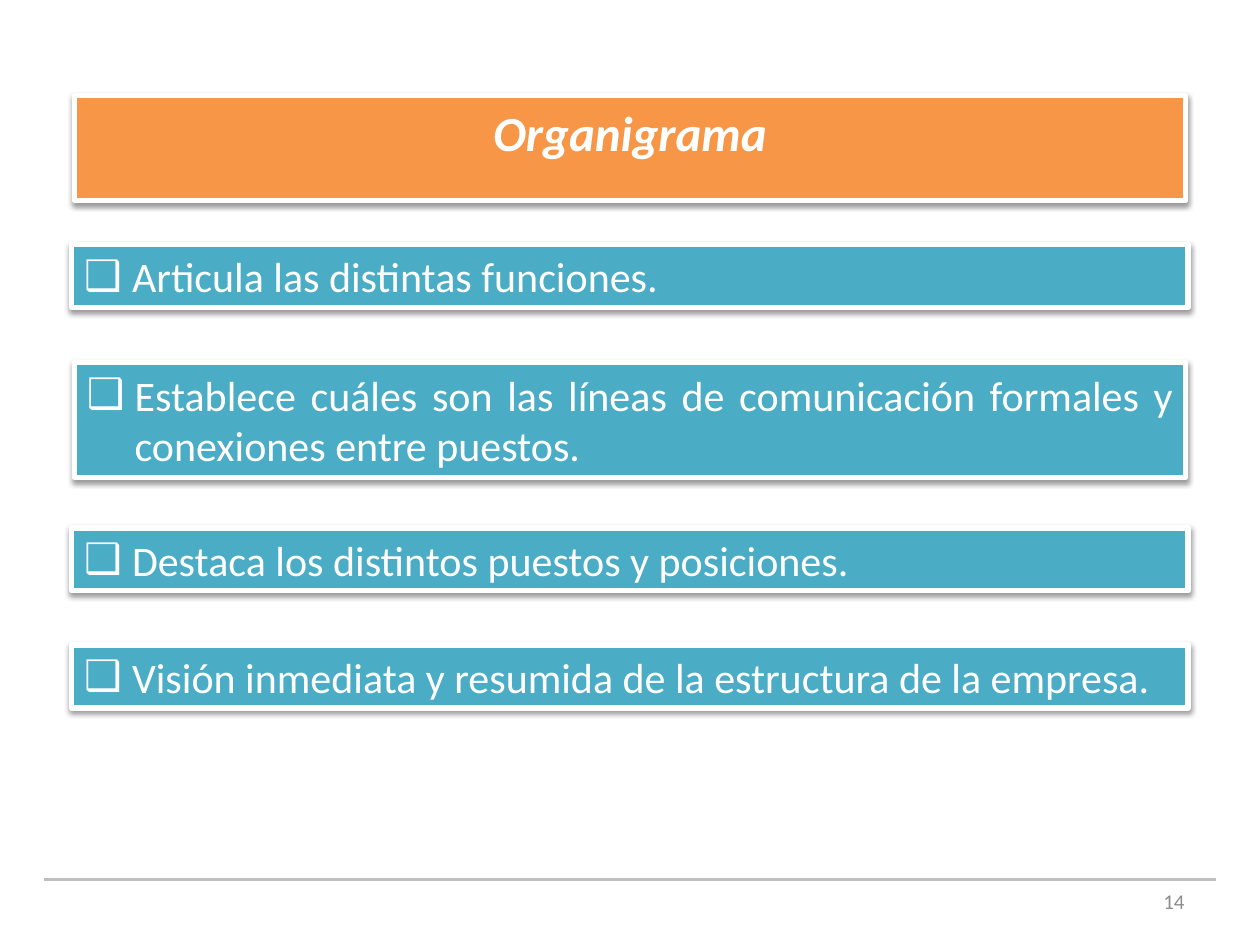
from lxml.etree import SubElement
from pptx import Presentation
from pptx.dml.color import RGBColor
from pptx.enum.shapes import MSO_CONNECTOR, MSO_SHAPE
from pptx.enum.text import MSO_ANCHOR, MSO_AUTO_SIZE, PP_ALIGN
from pptx.oxml.ns import qn
from pptx.util import Inches, Pt

FONT = "Calibri"
WHITE = RGBColor(0xFF, 0xFF, 0xFF)
ORANGE = RGBColor(0xF7, 0x96, 0x46)
TEAL = RGBColor(0x4B, 0xAC, 0xC6)
RULE_GRAY = RGBColor(0xBF, 0xBF, 0xBF)
NUMBER_GRAY = RGBColor(0x8C, 0x8C, 0x8C)

FUNCTIONS = [
    ("Articula las distintas funciones.", (0.57, 1.94, 8.86, 0.5)),
    ("Establece cuáles son las líneas de comunicación formales y conexiones entre puestos.",
     (0.59, 2.88, 8.82, 0.91)),
    ("Destaca los distintos puestos y posiciones.", (0.57, 4.19, 8.86, 0.5)),
    ("Visión inmediata y resumida de la estructura de la empresa.", (0.57, 5.12, 8.86, 0.5)),
]


def write_text(shape, text, size, color, align, anchor):
    """Write one formatted paragraph into a shape and return it."""
    frame = shape.text_frame
    frame.text = text
    frame.word_wrap = True
    frame.vertical_anchor = anchor
    paragraph = frame.paragraphs[0]
    paragraph.alignment = align
    font = paragraph.runs[0].font
    font.name, font.size = FONT, Pt(size)
    font.color.rgb = color
    return paragraph


def style_panel(panel, color):
    """Give a panel its fill, white border and soft shadow below."""
    panel.fill.solid()
    panel.fill.fore_color.rgb = color
    panel.line.color.rgb = WHITE
    panel.line.width = Pt(3)
    panel.shadow.inherit = False
    effects = panel._element.spPr.find(qn("a:effectLst"))
    shadow = SubElement(effects, qn("a:outerShdw"), blurRad=str(Pt(3.1)),
                        dist=str(Pt(1.6)), dir="5400000", rotWithShape="0")
    shade = SubElement(shadow, qn("a:srgbClr"), val="000000")
    SubElement(shade, qn("a:alpha"), val="38000")
    panel.text_frame.auto_size = MSO_AUTO_SIZE.SHAPE_TO_FIT_TEXT


def add_heading(slide, left, top, width, height):
    """Place the title placeholder as an orange banner."""
    heading = slide.shapes.title
    heading.left, heading.top = Inches(left), Inches(top)
    heading.width, heading.height = Inches(width), Inches(height)
    style_panel(heading, ORANGE)
    paragraph = write_text(heading, "Organigrama", 28, WHITE, PP_ALIGN.CENTER, MSO_ANCHOR.TOP)
    paragraph.runs[0].font.bold = True
    paragraph.runs[0].font.italic = True


def add_function(slide, text, left, top, width, height):
    """Add one teal panel with a square-bulleted statement."""
    panel = slide.shapes.add_shape(MSO_SHAPE.RECTANGLE, Inches(left), Inches(top),
                                   Inches(width), Inches(height))
    style_panel(panel, TEAL)
    paragraph = write_text(panel, text, 24, WHITE, PP_ALIGN.JUSTIFY, MSO_ANCHOR.TOP)
    properties = paragraph._p.get_or_add_pPr()
    properties.set("marL", str(Inches(0.38)))
    properties.set("indent", str(-Inches(0.38)))
    SubElement(properties, qn("a:buFont"), typeface=FONT)
    SubElement(properties, qn("a:buChar"), char="❑")


def add_footer(slide, left, top, width):
    """Draw the footer rule with the page number under its right end."""
    rule = slide.shapes.add_connector(MSO_CONNECTOR.STRAIGHT, Inches(left), Inches(top),
                                      Inches(left + width), Inches(top))
    rule.line.color.rgb = RULE_GRAY
    rule.line.width = Pt(2)
    SubElement(rule._element.spPr, qn("a:effectLst"))
    number = slide.shapes.add_textbox(Inches(left + width - 2.48), Inches(top - 0.03),
                                      Inches(2.33), Inches(0.4))
    write_text(number, "14", 12, NUMBER_GRAY, PP_ALIGN.RIGHT, MSO_ANCHOR.MIDDLE)


def main():
    """Build the slide and save it."""
    deck = Presentation()
    deck.slide_width, deck.slide_height = Inches(10), Inches(7.5)
    slide = deck.slides.add_slide(deck.slide_layouts.get_by_name("Title Only"))
    add_footer(slide, 0.35, 6.98, 9.3)
    add_heading(slide, 0.59, 0.76, 8.82, 0.57)
    for text, box in FUNCTIONS:
        add_function(slide, text, *box)
    deck.save("out.pptx")


if __name__ == "__main__":
    main()
